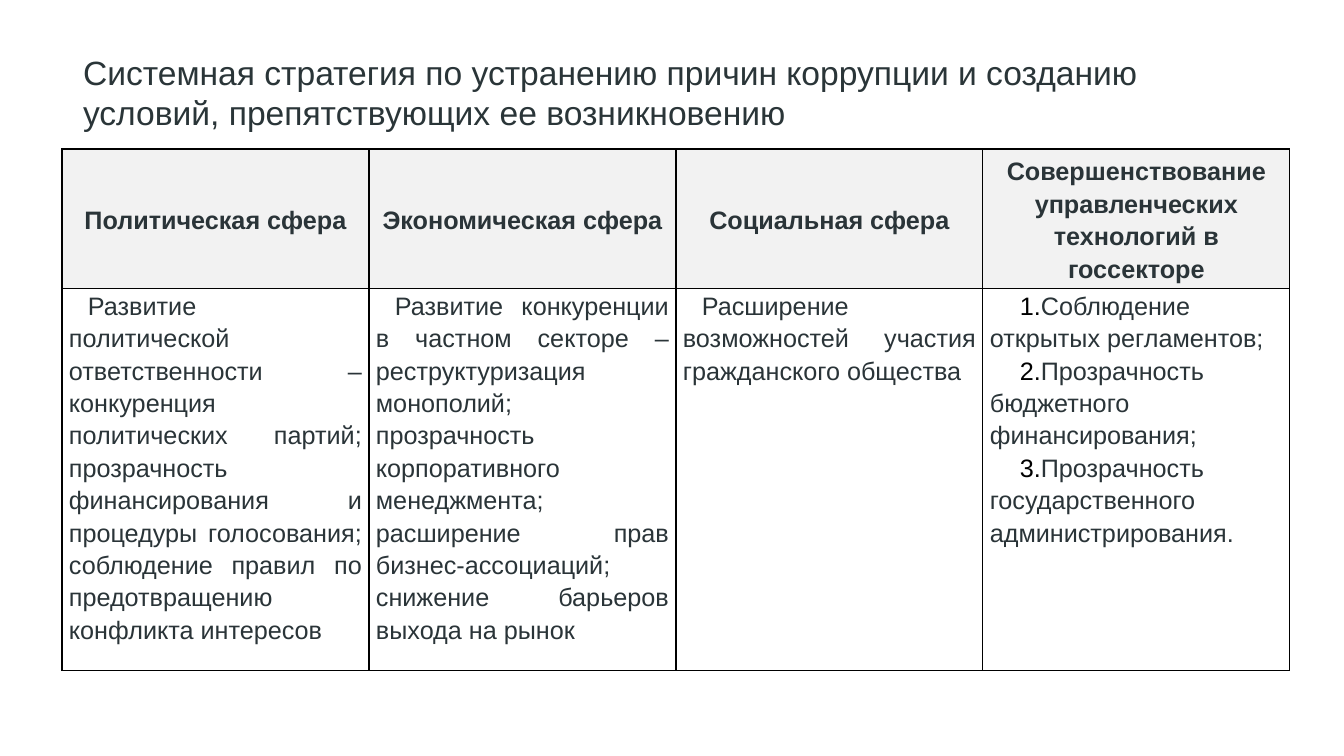
from lxml import etree
from pptx import Presentation
from pptx import util as u
from pptx.dml.color import RGBColor
from pptx.enum import text
from pptx.oxml.ns import qn

TITLE = ("Системная стратегия по устранению причин коррупции и созданию условий, "
         "препятствующих ее возникновению")
# Each sphere: heading, measures
SPHERES = [
    ("Политическая сфера", [
        "Развитие политической ответственности – конкуренция политических партий; "
        "прозрачность финансирования и процедуры голосования; "
        "соблюдение правил по предотвращению конфликта интересов"]),
    ("Экономическая сфера", [
        "Развитие конкуренции в частном секторе – реструктуризация монополий; "
        "прозрачность корпоративного менеджмента; "
        "расширение прав бизнес-ассоциаций; снижение барьеров выхода на рынок"]),
    ("Социальная сфера", ["Расширение возможностей участия гражданского общества"]),
    ("Совершенствование управленческих технологий в госсекторе", [
        "Соблюдение открытых регламентов;",
        "Прозрачность бюджетного финансирования;",
        "Прозрачность государственного администрирования."]),
]

COLORS = {"title": "2A3538", "text": "2A3438", "header": "F2F2F2", "line": "000000"}
FONT = "Arial"
SLIDE = (1344, 756)
TITLE_BOX = (80, 35, 1174, 114)
TABLE_LEFT, TABLE_TOP = 62, 149
COLUMN_WIDTH = 307
ROW_HEIGHTS = (139, 382)
CELL_MARGIN = 7
FIRST_LINE, NUMBERED_LINE, NUMBER_TAB = 19, 30, 26


def px(n):
    return u.Emu(round(n * 914400 / 100.8))


def rgb(name):
    return RGBColor.from_string(COLORS[name])


def style(paragraph, size, color, bold=False):
    font = paragraph.font
    font.name, font.size, font.bold = FONT, u.Pt(size), bold
    font.color.rgb = rgb(color)


def add(parent, tag, **attributes):
    return etree.SubElement(parent, qn(tag), attributes)


def add_borders(cell):
    properties = cell._tc.get_or_add_tcPr()
    for side in ("a:lnL", "a:lnR", "a:lnT", "a:lnB"):
        line = add(properties, side, w=str(u.Pt(1)))
        add(add(line, "a:solidFill"), "a:srgbClr", val=COLORS["line"])


def set_indent(paragraph, numbered):
    properties = paragraph._p.get_or_add_pPr()
    properties.set("marL", "0")
    properties.set("indent", str(px(NUMBERED_LINE if numbered else FIRST_LINE)))
    if numbered:
        add(add(properties, "a:buClr"), "a:srgbClr", val=COLORS["line"])
        add(properties, "a:buFont", typeface="+mj-lt")
        add(properties, "a:buAutoNum", type="arabicPeriod")
        add(add(properties, "a:tabLst"), "a:tab", pos=str(px(NUMBER_TAB)), algn="l")


def fill_cell(cell, lines, header):
    cell.margin_left = cell.margin_right = px(CELL_MARGIN)
    cell.margin_top = cell.margin_bottom = 0
    cell.vertical_anchor = text.MSO_ANCHOR.MIDDLE if header else text.MSO_ANCHOR.TOP
    add_borders(cell)
    if header:
        cell.fill.solid()
        cell.fill.fore_color.rgb = rgb("header")
    else:
        cell.fill.background()
    cell.text = "\n".join(lines)
    for paragraph in cell.text_frame.paragraphs:
        paragraph.line_spacing = 1.15
        paragraph.alignment = text.PP_ALIGN.CENTER if header else text.PP_ALIGN.JUSTIFY
        if not header:
            set_indent(paragraph, numbered=len(lines) > 1)
        style(paragraph, 18, "text", bold=header)


def add_title(slide):
    frame = slide.shapes.add_textbox(*map(px, TITLE_BOX)).text_frame
    frame.word_wrap = True
    frame.vertical_anchor = text.MSO_ANCHOR.MIDDLE
    frame.margin_left = frame.margin_right = px(3)
    frame.margin_top = frame.margin_bottom = px(3)
    frame.text = TITLE
    style(frame.paragraphs[0], 24, "title")


def add_spheres(slide):
    table = slide.shapes.add_table(
        len(ROW_HEIGHTS), len(SPHERES), px(TABLE_LEFT), px(TABLE_TOP),
        px(COLUMN_WIDTH * len(SPHERES)), px(sum(ROW_HEIGHTS))).table
    table.horz_banding = table.first_row = False
    for row, height in zip(table.rows, ROW_HEIGHTS):
        row.height = px(height)
    for column, (heading, measures) in enumerate(SPHERES):
        table.columns[column].width = px(COLUMN_WIDTH)
        fill_cell(table.cell(0, column), [heading], header=True)
        fill_cell(table.cell(1, column), measures, header=False)


def main():
    deck = Presentation()
    deck.slide_width, deck.slide_height = map(px, SLIDE)
    slide = deck.slides.add_slide(deck.slide_layouts[6])
    add_title(slide)
    add_spheres(slide)
    deck.save("out.pptx")


if __name__ == "__main__":
    main()
